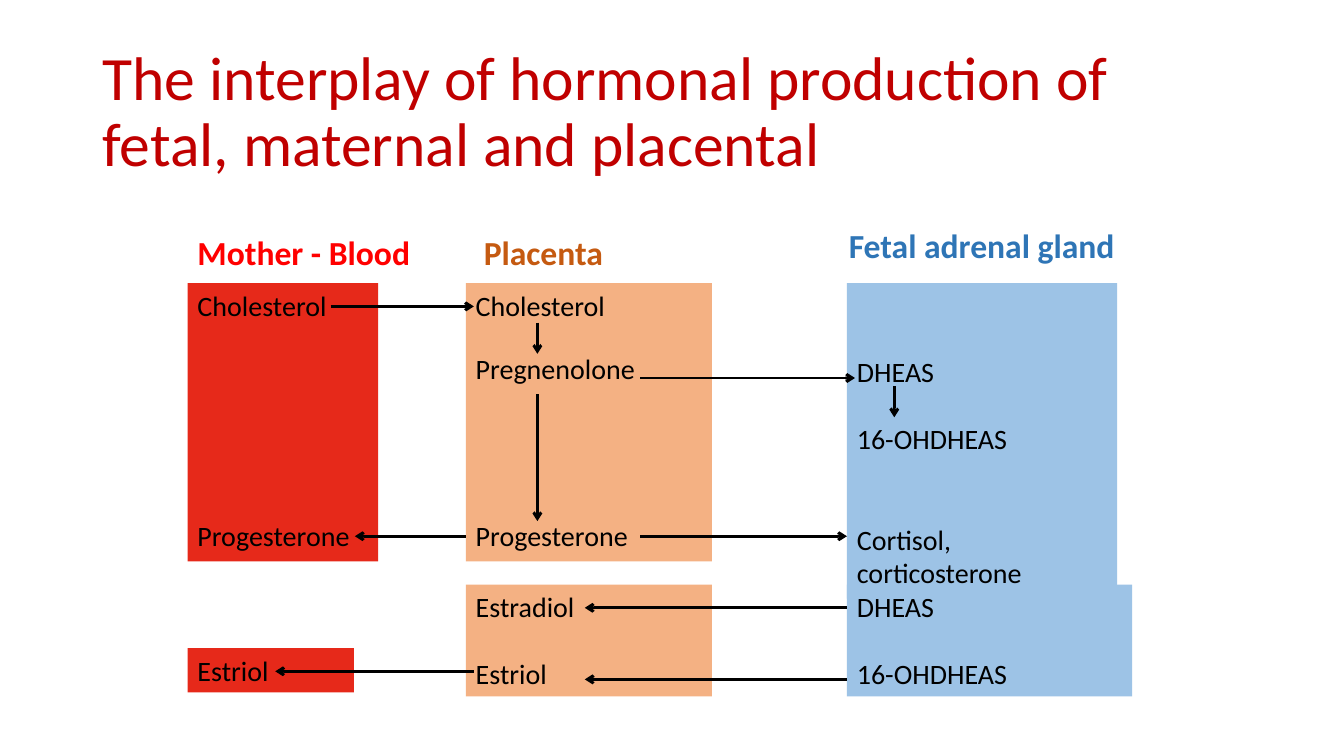
from lxml.etree import SubElement
from pptx import Presentation
from pptx.dml.color import RGBColor
from pptx.enum.shapes import MSO_CONNECTOR, MSO_SHAPE
from pptx.enum.text import MSO_ANCHOR, PP_ALIGN
from pptx.oxml.ns import qn
from pptx.util import Inches, Pt

FONT = "Calibri"
BLACK = RGBColor(0x00, 0x00, 0x00)
TITLE_RED = RGBColor(0xC0, 0x00, 0x00)
HEAD_RED = RGBColor(0xFF, 0x00, 0x00)
HEAD_ORANGE = RGBColor(0xC5, 0x5A, 0x11)
HEAD_BLUE = RGBColor(0x2E, 0x75, 0xB6)
MOTHER = RGBColor(0xE6, 0x29, 0x1A)
PLACENTA = RGBColor(0xF4, 0xB1, 0x83)
FETUS = RGBColor(0x9D, 0xC3, 0xE6)

# Content
TITLE = "The interplay of hormonal production of fetal, maternal and placental"
LINE = 23.8  # height of one 20 pt line, in points

# Column edges and row tops
MOTHER_X, PLACENTA_X, FETUS_X = 1.86, 4.62, 8.4
UPPER_Y, LOWER_Y = 2.81, 5.8

# text, left, top, width, colour, wrap
HEADINGS = [
    ("Mother - Blood", MOTHER_X, 2.25, 2.68, HEAD_RED, True),
    ("Placenta", 4.7, 2.25, 1.73, HEAD_ORANGE, True),
    ("Fetal adrenal gland", 8.32, 2.18, 2.86, HEAD_BLUE, False),
]

# left, top, width, height, fill, [(hormone, points of space above)]
# The lower fetal panel comes first, so the cortisol label stays in front
PANELS = [
    (PLACENTA_X, UPPER_Y, 2.44, 2.76, PLACENTA,
     [("Cholesterol", 0), ("Pregnenolone", 21.5), ("Progesterone", 4 * LINE)]),
    (PLACENTA_X, LOWER_Y, 2.44, 1.11, PLACENTA,
     [("Estradiol", 0), ("Estriol", LINE)]),
    (FETUS_X, LOWER_Y, 2.83, 1.11, FETUS,
     [("DHEAS", 0), ("16-OHDHEAS", LINE)]),
    (FETUS_X, UPPER_Y, 2.68, 3.13, FETUS,
     [("DHEAS", 2 * LINE), ("16-OHDHEAS", LINE),
      ("Cortisol, corticosterone", 2 * LINE)]),
    (MOTHER_X, UPPER_Y, 1.89, 2.76, MOTHER,
     [("Cholesterol", 0), ("Progesterone", 21.5 + 5 * LINE)]),
    (MOTHER_X, 6.43, 1.65, 0.44, MOTHER, [("Estriol", 0)]),
]

# Arrows as (x, y) start and end
ARROWS = [
    ((5.33, 3.2), (5.33, 3.51)),
    ((5.33, 3.91), (5.33, 5.17)),
    ((6.35, 3.75), (8.48, 3.75)),
    ((6.35, 5.32), (FETUS_X, 5.32)),
    ((8.87, 3.83), (8.87, 4.14)),
    ((FETUS_X, 6.03), (5.8, 6.03)),
    ((FETUS_X, 6.74), (5.8, 6.74)),
    ((3.28, 3.04), (4.7, 3.04)),
    ((PLACENTA_X, 5.32), (3.52, 5.32)),
    ((4.7, 6.66), (2.73, 6.66)),
]


def add_run(p, text, size, color, bold=False):
    p.alignment = PP_ALIGN.LEFT
    r = p.add_run()
    r.text = text
    r.font.name = FONT
    r.font.size = Pt(size)
    r.font.bold = bold
    r.font.color.rgb = color


def add_text(s, text, box, size, color, bold=False, wrap=True):
    tf = s.shapes.add_textbox(*map(Inches, box)).text_frame
    tf.word_wrap = wrap
    add_run(tf.paragraphs[0], text, size, color, bold)
    return tf


def add_panel(s, box, fill, hormones):
    sp = s.shapes.add_shape(MSO_SHAPE.RECTANGLE, *map(Inches, box))
    sp.shadow.inherit = False
    sp.fill.solid()
    sp.fill.fore_color.rgb = fill
    sp.line.fill.background()
    tf = sp.text_frame
    tf.word_wrap = True
    tf.vertical_anchor = MSO_ANCHOR.TOP
    # Space above the first hormone goes into the top inset
    tf.margin_top = Inches(0.05) + Pt(hormones[0][1])
    for i, (name, gap) in enumerate(hormones):
        p = tf.add_paragraph() if i else tf.paragraphs[0]
        if i:
            p.space_before = Pt(gap)
        add_run(p, name, 20, BLACK)


def add_arrow(s, start, end):
    c = s.shapes.add_connector(MSO_CONNECTOR.STRAIGHT,
                               *map(Inches, start + end))
    c.line.color.rgb = BLACK
    c.line.width = Pt(2)
    SubElement(c.line._get_or_add_ln(), qn("a:tailEnd"), type="arrow")
    SubElement(c._element.spPr, qn("a:effectLst"))


def main():
    prs = Presentation()
    prs.slide_width, prs.slide_height = Inches(13.33), Inches(7.5)
    s = prs.slides.add_slide(prs.slide_layouts[6])

    # Title
    tf = add_text(s, TITLE, (0.92, 0.4, 11.5, 1.45), 44, TITLE_RED)
    tf.vertical_anchor = MSO_ANCHOR.MIDDLE
    tf.paragraphs[0].line_spacing = 0.9

    # Column headings
    for text, x, y, w, color, wrap in HEADINGS:
        add_text(s, text, (x, y, w, 0.5), 24, color, True, wrap)

    # Hormone panels, then the arrows over them
    for *box, fill, hormones in PANELS:
        add_panel(s, box, fill, hormones)
    for start, end in ARROWS:
        add_arrow(s, start, end)

    prs.save("out.pptx")


if __name__ == "__main__":
    main()
